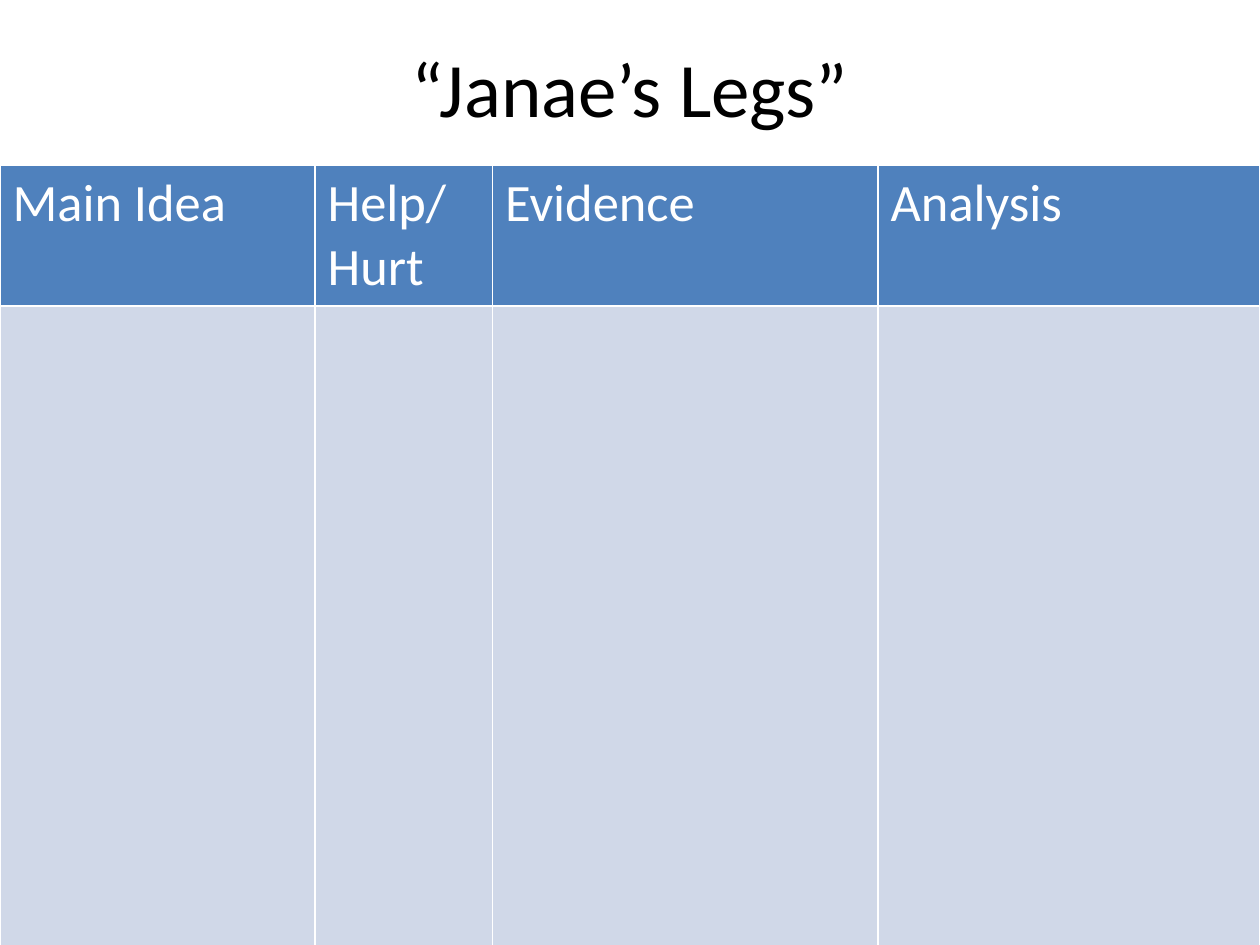
from pptx import Presentation
from pptx.dml.color import RGBColor
from pptx.enum.text import MSO_ANCHOR, PP_ALIGN
from pptx.util import Cm, Pt

BLACK = RGBColor(0x00, 0x00, 0x00)
WHITE = RGBColor(0xFF, 0xFF, 0xFF)
BLUE = RGBColor(0x4F, 0x81, 0xBD)
PALE = RGBColor(0xD0, 0xD8, 0xE8)

TITLE = {"size": Pt(44), "name": "Calibri", "bold": False}
HEAD = {"size": Pt(30), "name": "Calibri", "bold": False}
PLACE = {"left": Cm(1.27), "top": Cm(0.15), "width": Cm(22.86), "height": Cm(3.18)}

COLS = {"Main Idea": 6.35, "Help/Hurt": 3.58, "Evidence": 7.77, "Analysis": 7.7}
ROWS = [1.65, 15.57]


def apply(item, style):
    """Set each value of a style on an item."""
    for key, value in style.items():
        setattr(item, key, value)


def write(frame, text, style, color):
    """Put one styled line of text in a frame."""
    para = frame.paragraphs[0]
    run = para.add_run()
    run.text = text
    apply(run.font, style)
    run.font.color.rgb = color
    return para


def add_title(slide, text):
    """Move and fill the title placeholder."""
    title = slide.shapes.title
    apply(title, PLACE)
    title.text_frame.vertical_anchor = MSO_ANCHOR.MIDDLE
    write(title.text_frame, text, TITLE, BLACK).alignment = PP_ALIGN.CENTER


def add_chart_grid(slide):
    """Add the note table with a head row and an open row."""
    frame = slide.shapes.add_table(
        len(ROWS), len(COLS), Cm(0), Cm(3.33), Cm(sum(COLS.values())), Cm(sum(ROWS))
    )
    table = frame.table
    for row, height in zip(table.rows, ROWS):
        row.height = Cm(height)
    for col, (label, width) in enumerate(COLS.items()):
        table.columns[col].width = Cm(width)
        write(table.cell(0, col).text_frame, label, HEAD, WHITE)
        for row, color in enumerate((BLUE, PALE)):
            fill = table.cell(row, col).fill
            fill.solid()
            fill.fore_color.rgb = color


def main():
    """Build and save the slide."""
    deck = Presentation()
    apply(deck, {"slide_width": Cm(25.4), "slide_height": Cm(19.05)})
    slide = deck.slides.add_slide(deck.slide_layouts[5])
    add_title(slide, "“Janae’s Legs”")
    add_chart_grid(slide)
    deck.save("out.pptx")


if __name__ == "__main__":
    main()
